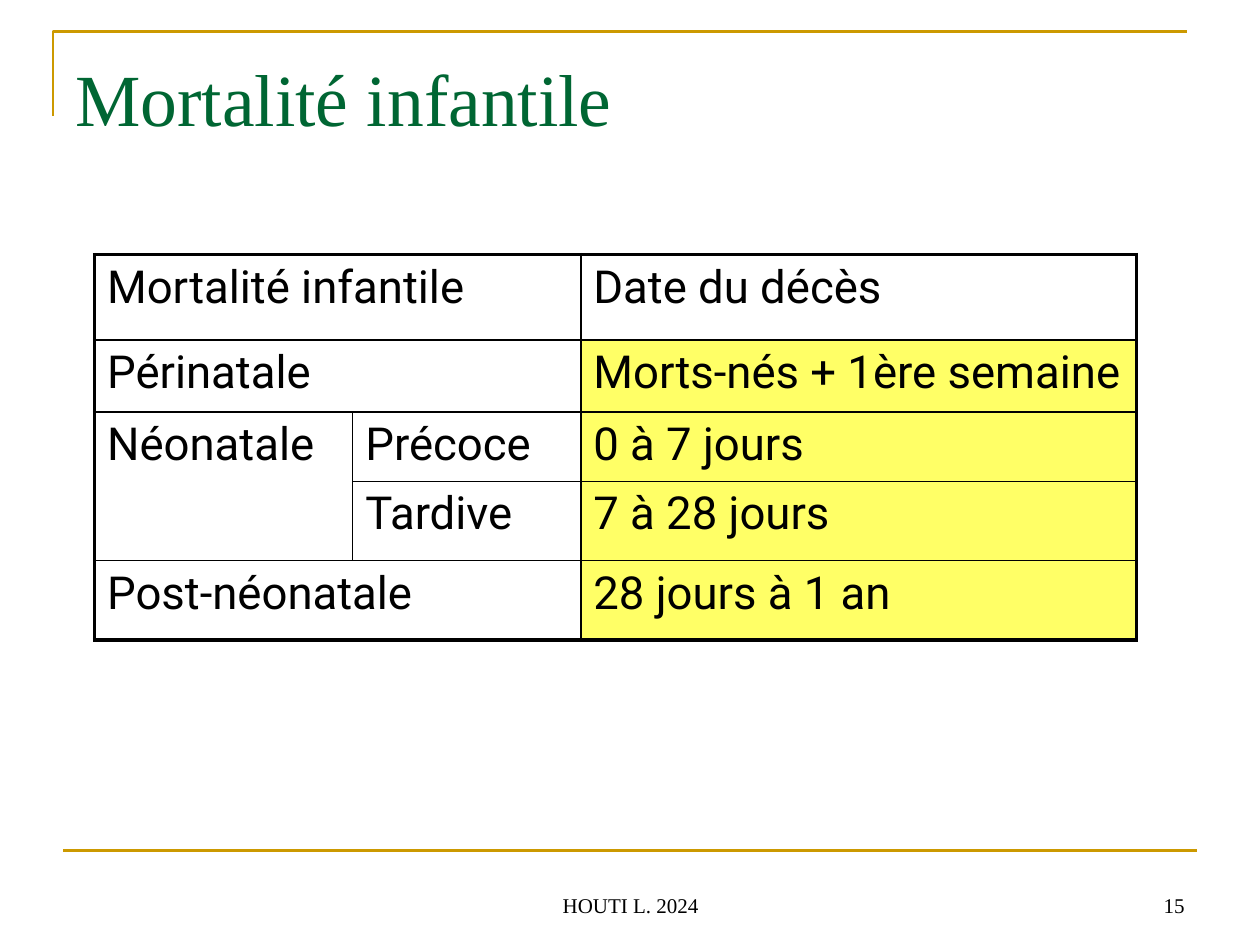
from dataclasses import dataclass

from lxml import etree
from pptx import Presentation
from pptx.dml.color import RGBColor
from pptx.enum.shapes import MSO_CONNECTOR
from pptx.enum.text import MSO_ANCHOR, PP_ALIGN
from pptx.oxml.ns import qn
from pptx.util import Inches, Pt

LEFT, CENTER, RIGHT = PP_ALIGN.LEFT, PP_ALIGN.CENTER, PP_ALIGN.RIGHT
TOP, BOTTOM = MSO_ANCHOR.TOP, MSO_ANCHOR.BOTTOM
STRAIGHT = MSO_CONNECTOR.STRAIGHT

COLORS = {
    "gold": "CC9900",
    "green": "006633",
    "black": "000000",
    "yellow": "FFFF66",
}
SERIF, SANS = "Times New Roman", "Roboto"
THICK, THIN = 2.25, 1


@dataclass
class Label:
    text: str
    left: float
    top: float
    width: float
    height: float
    size: float = 12
    color: str = "black"
    align: PP_ALIGN = LEFT
    anchor: MSO_ANCHOR = BOTTOM
    inset_top: float = 0.05


@dataclass
class Entry:
    text: str
    row: int
    col: int
    rows: int = 1
    cols: int = 1


TITLE = Label("Mortalité infantile", 0.5, 0.3, 9, 1.25, size=42,
              color="green", anchor=TOP, inset_top=0.12)
FOOTER = Label("HOUTI L. 2024", 3.42, 6.83, 3.17, 0.5, align=CENTER)
NUMBER = Label("15", 7.17, 6.83, 2.33, 0.5, align=RIGHT)

COL_WIDTHS = [2.05, 1.81, 4.41]
ROW_HEIGHTS = [0.68, 0.57, 0.55, 0.63, 0.63]
ENTRIES = [
    Entry("Mortalité infantile", 0, 0, cols=2),
    Entry("Date du décès", 0, 2),
    Entry("Périnatale", 1, 0, cols=2),
    Entry("Morts-nés + 1ère semaine", 1, 2),
    Entry("Néonatale", 2, 0, rows=2),
    Entry("Précoce", 2, 1),
    Entry("0 à 7 jours", 2, 2),
    Entry("Tardive", 3, 1),
    Entry("7 à 28 jours", 3, 2),
    Entry("Post-néonatale", 4, 0, cols=2),
    Entry("28 jours à 1 an", 4, 2),
]


def rgb(name: str) -> RGBColor:
    return RGBColor.from_string(COLORS[name])


def write(tf, text: str, *, size: float, font: str,
          color: str = "black", align: PP_ALIGN = LEFT) -> None:
    p = tf.paragraphs[0]
    p.alignment = align
    r = p.add_run()
    r.text = text
    r.font.size = Pt(size)
    r.font.name = font
    r.font.bold = False
    r.font.color.rgb = rgb(color)


def add_label(s, label: Label) -> None:
    sp = s.shapes.add_textbox(Inches(label.left), Inches(label.top),
                              Inches(label.width), Inches(label.height))
    tf = sp.text_frame
    tf.word_wrap = True
    tf.vertical_anchor = label.anchor
    tf.margin_top = Inches(label.inset_top)
    write(tf, label.text, size=label.size, font=SERIF,
          color=label.color, align=label.align)


def style_line(sp) -> None:
    sp.line.color.rgb = rgb("gold")
    sp.line.width = Pt(1.5)


def add_corner(s) -> None:
    fb = s.shapes.build_freeform(Inches(0.42), Inches(0.92))
    fb.add_line_segments([(Inches(0.42), Inches(0.25)),
                          (Inches(9.42), Inches(0.25))], close=False)
    sp = fb.convert_to_shape()
    sp.shadow.inherit = False
    sp.fill.background()
    style_line(sp)


def add_rule(s) -> None:
    sp = s.shapes.add_connector(STRAIGHT, Inches(0.5), Inches(6.75),
                                Inches(9.5), Inches(6.75))
    style_line(sp)
    etree.SubElement(sp._element.spPr, qn("a:effectLst"))


def set_borders(cell, row: int, col: int) -> None:
    outer = {
        "a:lnL": col == 0,
        "a:lnR": col == len(COL_WIDTHS) - 1,
        "a:lnT": row == 0,
        "a:lnB": row == len(ROW_HEIGHTS) - 1,
    }
    tc_pr = cell._tc.get_or_add_tcPr()
    for tag, is_outer in outer.items():
        width = Pt(THICK if is_outer else THIN)
        ln = etree.SubElement(tc_pr, qn(tag), w=str(width))
        fill = etree.SubElement(ln, qn("a:solidFill"))
        etree.SubElement(fill, qn("a:srgbClr"), val=COLORS["black"])


def add_mortality_table(s) -> None:
    sp = s.shapes.add_table(len(ROW_HEIGHTS), len(COL_WIDTHS),
                            Inches(0.75), Inches(2.02),
                            Inches(sum(COL_WIDTHS)), Inches(sum(ROW_HEIGHTS)))
    table = sp.table
    table.first_row = False
    table.horz_banding = False
    for column, width in zip(table.columns, COL_WIDTHS):
        column.width = Inches(width)
    for i, height in enumerate(ROW_HEIGHTS):
        table.rows[i].height = Inches(height)
        for j in range(len(COL_WIDTHS)):
            cell = table.cell(i, j)
            set_borders(cell, i, j)
            if i > 0 and j == 2:
                cell.fill.solid()
                cell.fill.fore_color.rgb = rgb("yellow")
            else:
                cell.fill.background()
    for entry in ENTRIES:
        cell = table.cell(entry.row, entry.col)
        if entry.rows > 1 or entry.cols > 1:
            cell.merge(table.cell(entry.row + entry.rows - 1,
                                  entry.col + entry.cols - 1))
        write(cell.text_frame, entry.text, size=26, font=SANS)


def main() -> None:
    prs = Presentation()
    prs.slide_width, prs.slide_height = Inches(10), Inches(7.5)
    s = prs.slides.add_slide(prs.slide_layouts[6])
    add_corner(s)
    add_rule(s)
    add_label(s, FOOTER)
    add_label(s, TITLE)
    add_mortality_table(s)
    add_label(s, NUMBER)
    prs.save("out.pptx")


if __name__ == "__main__":
    main()
